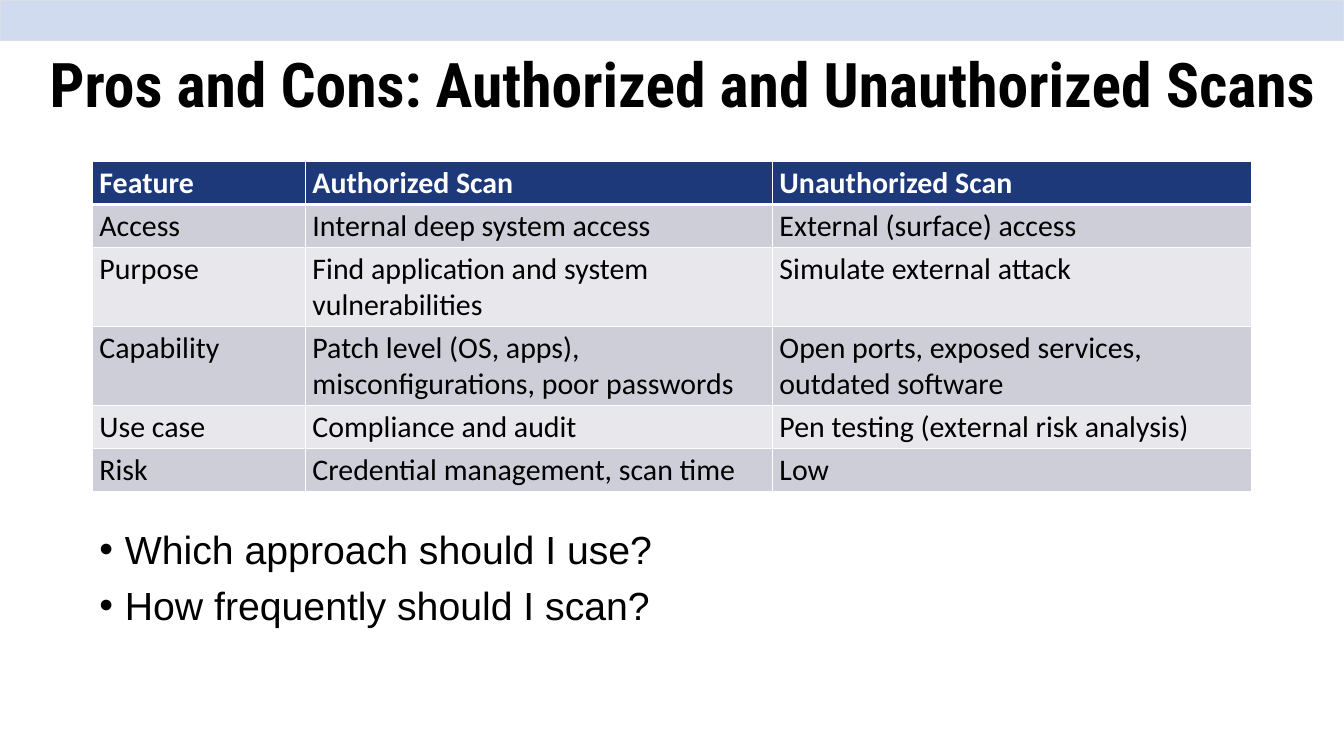
from dataclasses import dataclass

from lxml.etree import SubElement
from pptx import Presentation
from pptx.dml.color import RGBColor
from pptx.enum.shapes import MSO_SHAPE
from pptx.enum.text import MSO_ANCHOR, PP_ALIGN
from pptx.oxml.ns import qn
from pptx.slide import Slide
from pptx.table import _Cell
from pptx.text.text import TextFrame, _Paragraph
from pptx.util import Inches, Pt

BLACK = RGBColor(0x00, 0x00, 0x00)
WHITE = RGBColor(0xFF, 0xFF, 0xFF)
NAVY = RGBColor(0x1D, 0x39, 0x7A)
DARK_BAND = RGBColor(0xCD, 0xCE, 0xD7)
LIGHT_BAND = RGBColor(0xE8, 0xE8, 0xEC)
BAR_FILL = RGBColor(0xD1, 0xDB, 0xF0)
BAR_LINE = RGBColor(0xD9, 0xDE, 0xEA)

SLIDE_WIDTH, SLIDE_HEIGHT = 20, 11.25
CONTENT_LEFT, CONTENT_WIDTH = 1.38, 17.25
COLUMN_WIDTHS = (3.17, 6.95, 7.12)
LINE_HEIGHT, CELL_PADDING = 0.54, 0.1


@dataclass(frozen=True)
class TextStyle:
    font: str
    size: float
    color: RGBColor = BLACK
    bold: bool = False


@dataclass(frozen=True)
class ScanRow:
    feature: str
    authorized: str
    unauthorized: str
    lines: int = 1


TITLE_STYLE = TextStyle("Roboto Condensed", 66, bold=True)
HEADER_STYLE = TextStyle("Calibri", 32, WHITE, True)
BODY_STYLE = TextStyle("Calibri", 32)
QUESTION_STYLE = TextStyle("Arial", 42)

SCAN_ROWS = (
    ScanRow("Feature", "Authorized Scan", "Unauthorized Scan"),
    ScanRow("Access", "Internal deep system access", "External (surface) access"),
    ScanRow("Purpose", "Find application and system vulnerabilities",
            "Simulate external attack", 2),
    ScanRow("Capability", "Patch level (OS, apps), misconfigurations, poor passwords",
            "Open ports, exposed services, outdated software", 2),
    ScanRow("Use case", "Compliance and audit", "Pen testing (external risk analysis)"),
    ScanRow("Risk", "Credential management, scan time", "Low"),
)
QUESTIONS = ("Which approach should I use?", "How frequently should I scan?")


def style_paragraph(paragraph: _Paragraph, style: TextStyle) -> None:
    paragraph.alignment = PP_ALIGN.LEFT
    for run in paragraph.runs:
        run.font.name = style.font
        run.font.size = Pt(style.size)
        run.font.bold = style.bold
        run.font.color.rgb = style.color


def add_text_box(slide: Slide, left: float, top: float, width: float,
                 height: float, text: str) -> TextFrame:
    box = slide.shapes.add_textbox(Inches(left), Inches(top), Inches(width), Inches(height))
    box.text_frame.word_wrap = True
    box.text_frame.text = text
    return box.text_frame


def add_top_bar(slide: Slide) -> None:
    bar = slide.shapes.add_shape(MSO_SHAPE.RECTANGLE, 0, 0, Inches(SLIDE_WIDTH), Inches(0.6))
    bar.shadow.inherit = False
    bar.fill.solid()
    bar.fill.fore_color.rgb = BAR_FILL
    bar.line.color.rgb = BAR_LINE
    bar.line.width = Pt(1)


def add_title(slide: Slide) -> None:
    frame = add_text_box(slide, 0.64, 0.22, 19.16, 2.17,
                         "Pros and Cons: Authorized and Unauthorized Scans")
    frame.vertical_anchor = MSO_ANCHOR.MIDDLE
    frame.paragraphs[0].line_spacing = 0.9
    style_paragraph(frame.paragraphs[0], TITLE_STYLE)


def set_borders(cell: _Cell, top: float, bottom: float) -> None:
    properties = cell._tc.get_or_add_tcPr()
    for side, width in (("L", 1), ("R", 1), ("T", top), ("B", bottom)):
        line = SubElement(properties, qn(f"a:ln{side}"), w=str(Pt(width)))
        fill = SubElement(line, qn("a:solidFill"))
        SubElement(fill, qn("a:srgbClr"), val=str(WHITE))


def row_height(row: ScanRow) -> float:
    return row.lines * LINE_HEIGHT + CELL_PADDING


def add_scan_table(slide: Slide) -> None:
    height = sum(row_height(row) for row in SCAN_ROWS)
    table = slide.shapes.add_table(
        len(SCAN_ROWS), len(COLUMN_WIDTHS), Inches(CONTENT_LEFT), Inches(2.4),
        Inches(CONTENT_WIDTH), Inches(height)).table
    for column, width in zip(table.columns, COLUMN_WIDTHS):
        column.width = Inches(width)
    for index, row in enumerate(SCAN_ROWS):
        table.rows[index].height = Inches(row_height(row))
        is_header = index == 0
        band = NAVY if is_header else DARK_BAND if index % 2 else LIGHT_BAND
        texts = (row.feature, row.authorized, row.unauthorized)
        for cell, text in zip(table.rows[index].cells, texts):
            set_borders(cell, 3 if index == 1 else 1, 3 if is_header else 1)
            cell.fill.solid()
            cell.fill.fore_color.rgb = band
            cell.text_frame.text = text
            style_paragraph(cell.text_frame.paragraphs[0],
                            HEADER_STYLE if is_header else BODY_STYLE)


def add_questions(slide: Slide) -> None:
    frame = add_text_box(slide, CONTENT_LEFT, 7.84, CONTENT_WIDTH, 2.18, "\n".join(QUESTIONS))
    for index, paragraph in enumerate(frame.paragraphs):
        paragraph.line_spacing = 0.9
        paragraph.space_before = Pt(15 if index else 0)
        properties = paragraph._p.get_or_add_pPr()
        properties.set("marL", str(Inches(0.38)))
        properties.set("indent", str(Inches(-0.38)))
        SubElement(properties, qn("a:buFont"), typeface="Arial")
        SubElement(properties, qn("a:buChar"), char="•")
        style_paragraph(paragraph, QUESTION_STYLE)


def main() -> None:
    presentation = Presentation()
    presentation.slide_width = Inches(SLIDE_WIDTH)
    presentation.slide_height = Inches(SLIDE_HEIGHT)
    slide = presentation.slides.add_slide(presentation.slide_layouts[6])
    add_top_bar(slide)
    add_title(slide)
    add_scan_table(slide)
    add_questions(slide)
    presentation.save("out.pptx")


if __name__ == "__main__":
    main()
